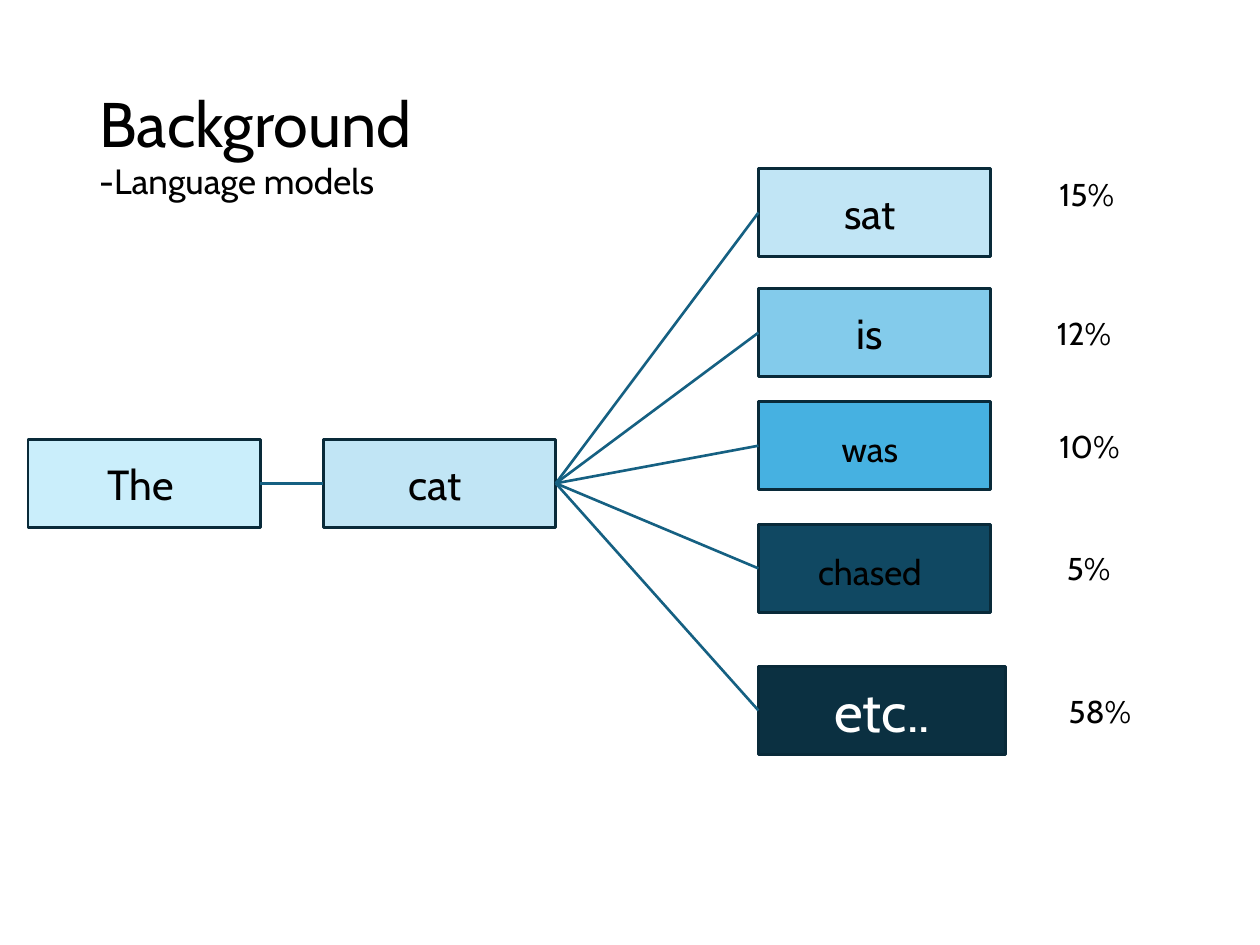
import pptx
import pptx.util
import pptx.dml.color
import pptx.enum.shapes
import pptx.enum.text
import pptx.oxml
import pptx.oxml.ns
from pptx.util import Pt

THEME = {
    "font": "Cabin",
    "ink": "000000", "light": "FFFFFF", "outline": "092A39", "link": "156082",
    "title": 36, "title_gap": 44, "subtitle": 20,
    "word": 24, "small_word": 20, "large_word": 32, "percent": 18,
    "stroke": 1.5,
}

# Trailing spaces belong to the centred words and shift them slightly left.
WORD, SMALL = THEME["word"], THEME["small_word"]
TITLE = [("Background", THEME["title"]), (" ", THEME["title_gap"]),
         ("\n", None), ("-Language models", THEME["subtitle"])]

# runs, left, fill
CONTEXT = [
    ([("The", WORD), (" ", 18)], 16, "CAEEFB"),
    ([("cat ", WORD)], 184.8, "C1E5F5"),
]
# runs, top, width, fill, text colour, percent, percent left, percent drop
CANDIDATES = [
    ([("sat ", WORD)], 96.3, 132.8, "C1E5F5", "ink", "15%", 598.3, 0),
    ([("is ", WORD)], 164.9, 132.8, "83CBEB", "ink", "12%", 596.9, 10.8),
    ([("was", SMALL), (" ", WORD)], 229.5, 132.8, "46B1E1", "ink", "10%", 598.3, 10.8),
    ([("chased", SMALL), (" ", WORD)], 299.6, 132.8, "104862", "ink", "5%", 602.6, 10.8),
    ([("etc..", THEME["large_word"])], 380.8, 141.3, "0B3041", "light", "58%", 603.5, 10.8),
]
BOX_WIDTH, BOX_HEIGHT = 132.8, 50.4
CONTEXT_TOP, CANDIDATE_LEFT = 251, 433.4
PERCENT_WIDTH, PERCENT_HEIGHT = 74, 29
LEFT_SIDE, RIGHT_SIDE = 1, 3


def rgb(value):
    return pptx.dml.color.RGBColor.from_string(value)


def write(frame, runs, color="ink", align="LEFT", anchor="MIDDLE", spacing=None):
    """Fill a frame's paragraph with (text, size) runs; a newline run is a line break."""
    frame.word_wrap = True
    frame.auto_size = pptx.enum.text.MSO_AUTO_SIZE.NONE
    frame.vertical_anchor = pptx.enum.text.MSO_ANCHOR[anchor]
    paragraph = frame.paragraphs[0]
    paragraph.alignment = pptx.enum.text.PP_ALIGN[align]
    if spacing:
        paragraph.line_spacing = spacing
    for text, size in runs:
        if text == "\n":
            paragraph.add_line_break()
            continue
        run = paragraph.add_run()
        run.text = text
        run.font.name = THEME["font"]
        run.font.size = Pt(size)
        run.font.color.rgb = rgb(THEME[color])


def add_word(slide, runs, left, top, width, fill, color="ink"):
    box = slide.shapes.add_shape(pptx.enum.shapes.MSO_SHAPE.RECTANGLE,
                                 Pt(left), Pt(top), Pt(width), Pt(BOX_HEIGHT))
    box.shadow.inherit = False
    box.fill.solid()
    box.fill.fore_color.rgb = rgb(fill)
    box.line.color.rgb = rgb(THEME["outline"])
    box.line.width = Pt(THEME["stroke"])
    write(box.text_frame, runs, color=color, align="CENTER")
    return box


def link(slide, source, target):
    """Join the right side of source to the left side of target."""
    line = slide.shapes.add_connector(pptx.enum.shapes.MSO_CONNECTOR.STRAIGHT, 0, 0, 0, 0)
    line.begin_connect(source, RIGHT_SIDE)
    line.end_connect(target, LEFT_SIDE)
    line.line.color.rgb = rgb(THEME["link"])
    line.line.width = Pt(THEME["stroke"])
    properties = line._element.spPr
    properties.append(pptx.oxml.parse_xml(
        f"<a:effectLst {pptx.oxml.ns.nsdecls('a')}/>"))


def main():
    deck = pptx.Presentation()
    deck.slide_width, deck.slide_height = Pt(720), Pt(540)
    slide = deck.slides.add_slide(deck.slide_layouts.get_by_name("Title Only"))

    title = slide.shapes.title
    title.left, title.top, title.width, title.height = Pt(49.5), Pt(28.75), Pt(621), Pt(104.4)
    write(title.text_frame, TITLE, spacing=0.9)

    first, last = [add_word(slide, runs, left, CONTEXT_TOP, BOX_WIDTH, fill)
                   for runs, left, fill in CONTEXT]
    link(slide, first, last)

    for runs, top, width, fill, color, percent, percent_left, drop in CANDIDATES:
        candidate = add_word(slide, runs, CANDIDATE_LEFT, top, width, fill, color)
        link(slide, last, candidate)
        label = slide.shapes.add_textbox(Pt(percent_left), Pt(top + drop),
                                         Pt(PERCENT_WIDTH), Pt(PERCENT_HEIGHT))
        write(label.text_frame, [(percent, THEME["percent"])], anchor="TOP")

    deck.save("out.pptx")


if __name__ == "__main__":
    main()
